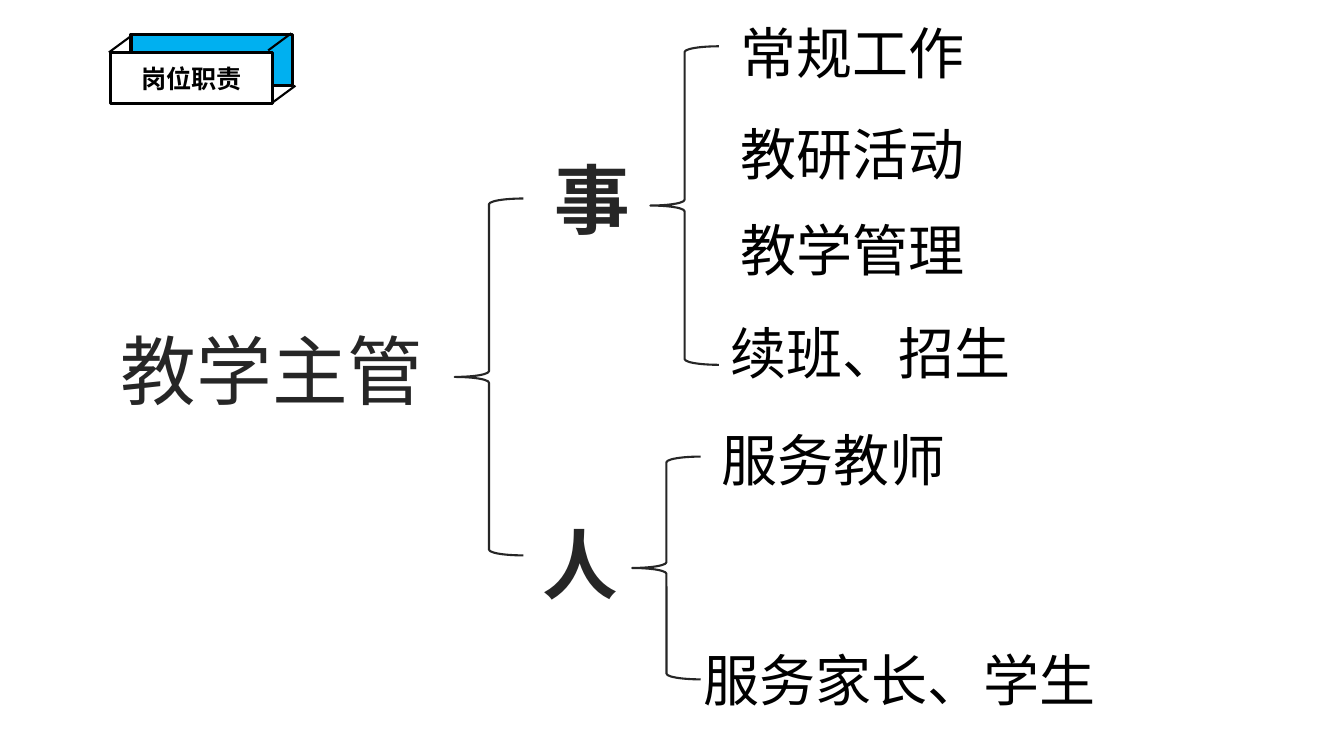
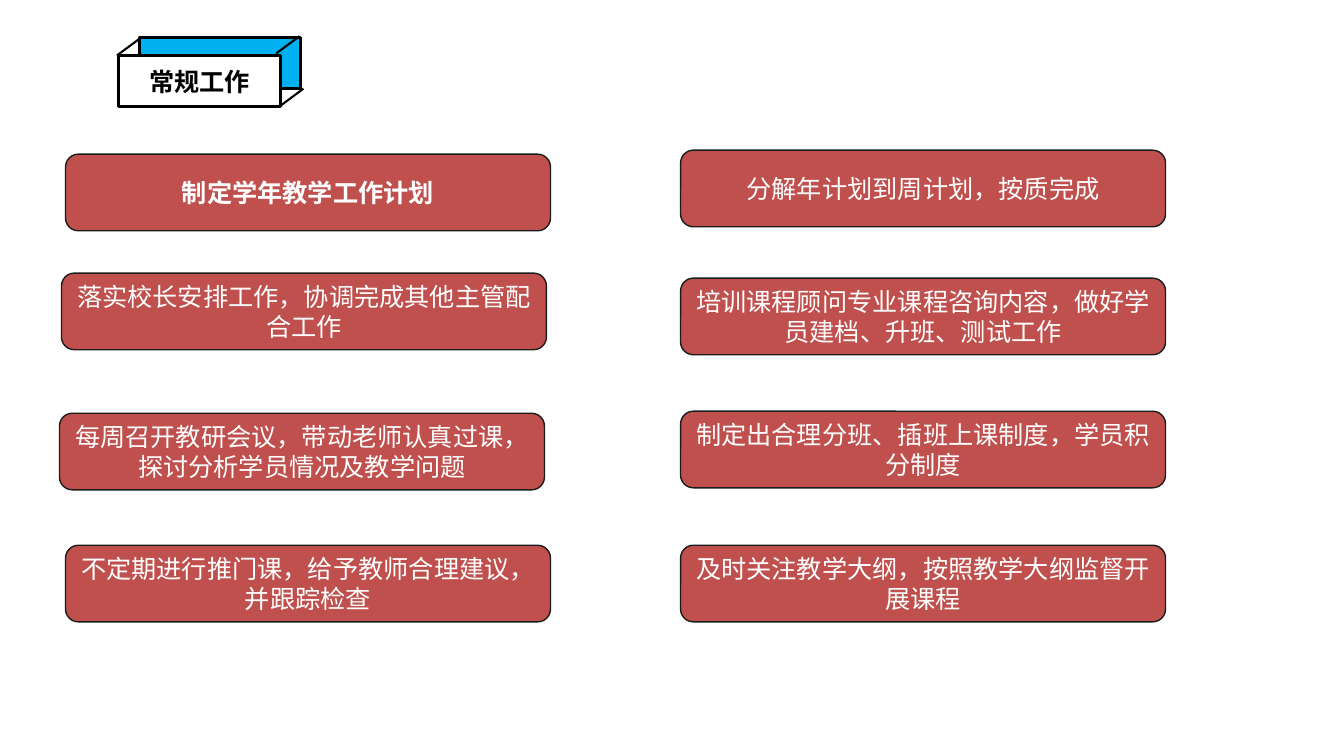
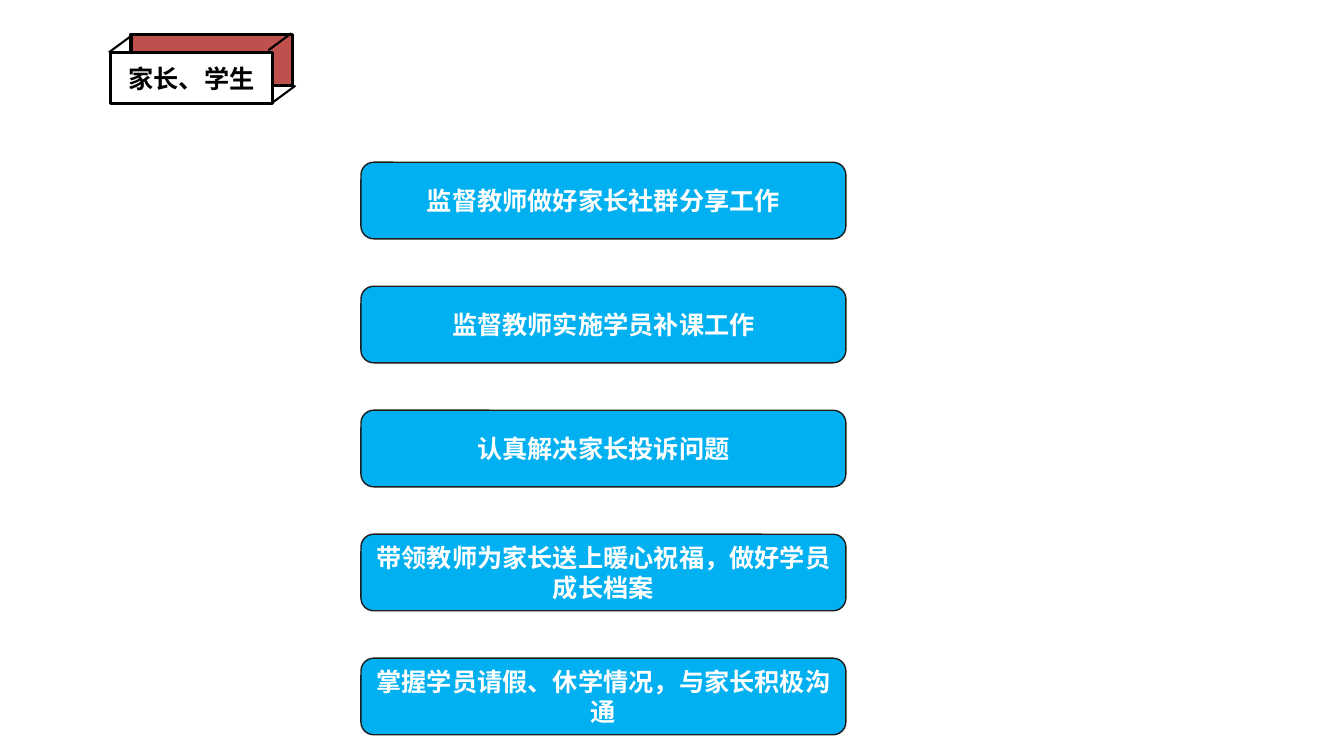
import pptx
import pptx.util
import pptx.dml.color
import pptx.enum.shapes
import pptx.enum.text
import pptx.oxml.ns
from lxml import etree

Inches = pptx.util.Inches
Pt = pptx.util.Pt
RGBColor = pptx.dml.color.RGBColor
SHAPE = pptx.enum.shapes.MSO_SHAPE
qn = pptx.oxml.ns.qn

BLACK = RGBColor(0x00, 0x00, 0x00)
WHITE = RGBColor(0xFF, 0xFF, 0xFF)
CHARCOAL = RGBColor(0x26, 0x26, 0x26)
CARD_EDGE = RGBColor(0x1C, 0x1C, 0x1C)
BLUE = RGBColor(0x00, 0xB0, 0xF0)
RED = RGBColor(0xC0, 0x50, 0x4D)

BODY_FONT = "Calibri"
HEADING_FONT = "Noto Sans CJK SC"

CARD_WIDTH, CARD_HEIGHT = 4.81, 0.76


def write(shape, text, size, color, font=BODY_FONT, bold=False):
    """Put one centred line of text into a shape or text box."""
    frame = shape.text_frame
    frame.text = text
    paragraph = frame.paragraphs[0]
    paragraph.alignment = pptx.enum.text.PP_ALIGN.CENTER
    run = paragraph.runs[0]
    run.font.size = Pt(size)
    run.font.bold = bold
    run.font.color.rgb = color
    run.font.name = font
    east_asian = etree.SubElement(run.font._element, qn("a:ea"))
    east_asian.set("typeface", BODY_FONT)


def add_outlined(shapes, kind, box, line_color, line_width, fill=None):
    shape = shapes.add_shape(kind, *map(Inches, box))
    shape.shadow.inherit = False
    if fill is None:
        shape.fill.background()
    else:
        shape.fill.solid()
        shape.fill.fore_color.rgb = fill
    shape.line.color.rgb = line_color
    shape.line.width = Pt(line_width)
    return shape


def add_edge(shapes, left, top):
    """Draw one slanted edge of the title block, down to the left."""
    edge = shapes.add_connector(
        pptx.enum.shapes.MSO_CONNECTOR.STRAIGHT,
        Inches(left + 0.23), Inches(top), Inches(left), Inches(top + 0.17))
    edge.line.color.rgb = BLACK
    edge.line.width = Pt(1.5)
    etree.SubElement(edge._element.spPr, qn("a:effectLst"))


def add_title_block(slide, title, back_color, left=1.1, top=0.34):
    """Draw the slide title on the front of a two-layer box."""
    parts = slide.shapes.add_group_shape().shapes
    width, height = 1.6, 0.51
    add_outlined(parts, SHAPE.RECTANGLE, (left + 0.2, top, width, height),
                 BLACK, 2.25, back_color)
    front = add_outlined(parts, SHAPE.RECTANGLE,
                         (left, top + 0.18, width, height), BLACK, 2.25, WHITE)
    front.text_frame.vertical_anchor = pptx.enum.text.MSO_ANCHOR.MIDDLE
    write(front, title, 18, BLACK, HEADING_FONT, bold=True)
    for across, down in ((-0.02, 0.01), (1.56, -0.01), (1.6, 0.51)):
        add_edge(parts, left + across, top + down)


def add_label(slide, text, box, size, color, bold=False):
    label = slide.shapes.add_textbox(*map(Inches, box))
    label.text_frame.word_wrap = False
    write(label, text, size, color, bold=bold)


def add_brace(slide, left, top, height):
    add_outlined(slide.shapes, SHAPE.LEFT_BRACE, (left, top, 0.68, height),
                 CHARCOAL, 1.5)


def add_branch(slide, name, left, top, brace, duties):
    """Draw a branch name, its brace and the duties the brace gathers."""
    add_label(slide, name, (left, top, 0.96, 1.01), 54, CHARCOAL, bold=True)
    add_brace(slide, *brace)
    for duty, duty_left, duty_top in duties:
        width = 0.2 + len(duty) * 40 / 72 + 0.03
        add_label(slide, duty, (duty_left, duty_top, width, 0.77), 40, BLACK)


def add_card(slide, text, left, top, fill, heading=False):
    card = add_outlined(slide.shapes, SHAPE.ROUNDED_RECTANGLE,
                        (left, top, CARD_WIDTH, CARD_HEIGHT),
                        CARD_EDGE, 1, fill)
    card.text_frame.word_wrap = True
    card.text_frame.vertical_anchor = pptx.enum.text.MSO_ANCHOR.MIDDLE
    write(card, text, 18, WHITE, HEADING_FONT if heading else BODY_FONT, heading)


def build_duties(slide):
    add_title_block(slide, "岗位职责", BLUE)
    add_label(slide, "教学主管", (1.1, 3.16, 3.2, 1.01), 54, CHARCOAL)
    add_brace(slide, 4.51, 1.97, 3.54)
    add_branch(slide, "事", 5.39, 1.47, (6.45, 0.46, 3.16), (
        ("常规工作", 7.23, 0.13),
        ("教研活动", 7.23, 1.14),
        ("教学管理", 7.23, 2.09),
        ("续班、招生", 7.13, 3.11),
    ))
    add_branch(slide, "人", 5.28, 5.09, (6.27, 4.53, 2.21), (
        ("服务教师", 7.04, 4.17),
        ("服务家长、学生", 6.86, 6.36),
    ))


def build_routine(slide):
    add_title_block(slide, "常规工作", BLUE, 1.18, 0.37)
    add_card(slide, "制定学年教学工作计划", 0.65, 1.53, RED, heading=True)
    for text, left, top in (
        ("落实校长安排工作，协调完成其他主管配合工作", 0.61, 2.71),
        ("每周召开教研会议，带动老师认真过课，探讨分析学员情况及教学问题", 0.59, 4.1),
        ("不定期进行推门课，给予教师合理建议，并跟踪检查", 0.65, 5.41),
        ("分解年计划到周计划，按质完成", 6.75, 1.49),
        ("培训课程顾问专业课程咨询内容，做好学员建档、升班、测试工作", 6.75, 2.76),
        ("制定出合理分班、插班上课制度，学员积分制度", 6.75, 4.08),
        ("及时关注教学大纲，按照教学大纲监督开展课程", 6.75, 5.41),
    ):
        add_card(slide, text, left, top, RED)


def build_families(slide):
    add_title_block(slide, "家长、学生", RED)
    tasks = (
        "监督教师做好家长社群分享工作",
        "监督教师实施学员补课工作",
        "认真解决家长投诉问题",
        "带领教师为家长送上暖心祝福，做好学员成长档案",
        "掌握学员请假、休学情况，与家长积极沟通",
    )
    for row, task in enumerate(tasks):
        add_card(slide, task, 3.58, 1.61 + row * 1.23, BLUE, heading=True)


def main():
    deck = pptx.Presentation()
    deck.slide_width = Inches(13.33)
    deck.slide_height = Inches(7.5)
    blank = deck.slide_layouts[6]
    for build in (build_duties, build_routine, build_families):
        build(deck.slides.add_slide(blank))
    deck.save("out.pptx")


if __name__ == "__main__":
    main()
